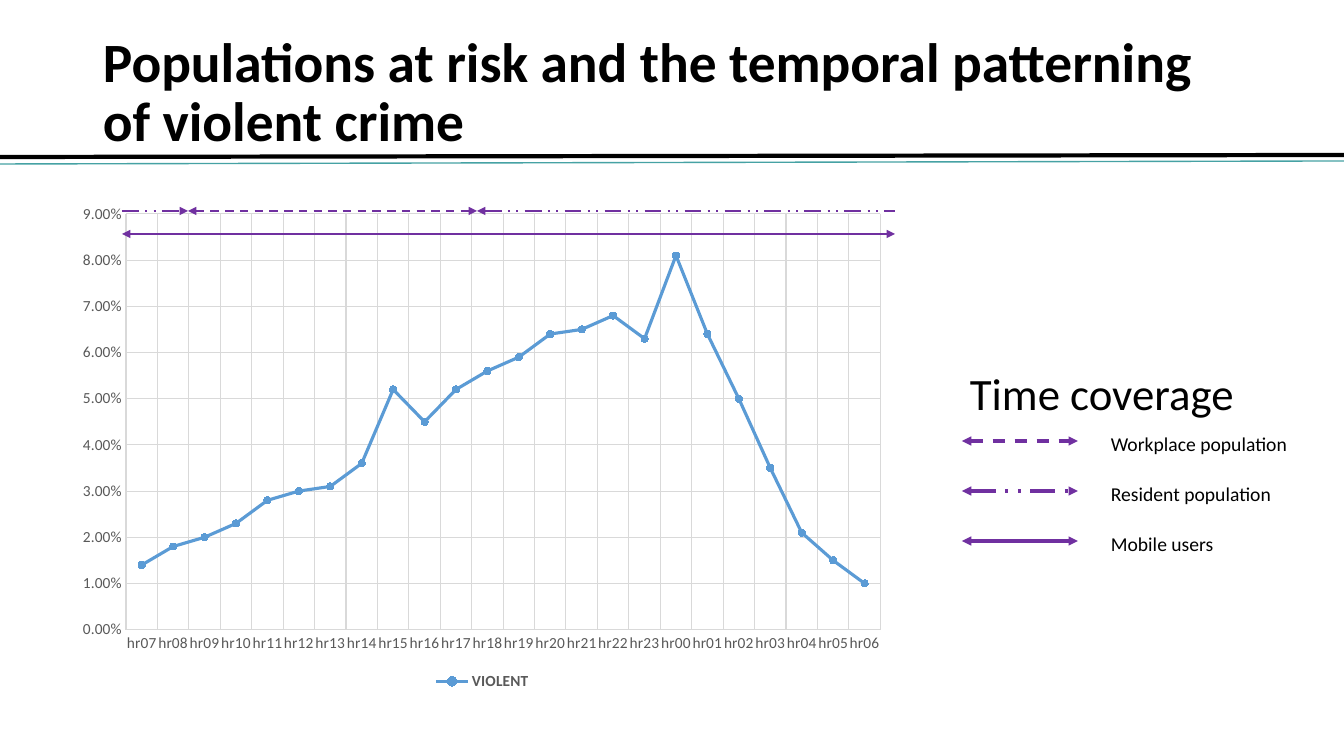
import dataclasses
import typing

import lxml.etree
import pptx
import pptx.chart.chart
import pptx.chart.data
import pptx.dml.color
import pptx.enum.chart
import pptx.enum.dml
import pptx.enum.shapes
import pptx.enum.text
import pptx.oxml
import pptx.oxml.ns
import pptx.shapes.shapetree
import pptx.util

EMU_PER_PX = 12192000 / 1344
FONT = "Calibri"
COLORS = {
    "black": "000000",
    "teal": "46A2A4",
    "purple": "7030A0",
    "blue": "5B9BD5",
    "gray": "595959",
    "grid": "D9D9D9",
}
DASH = pptx.enum.dml.MSO_LINE.DASH
DASH_DOT_DOT = pptx.enum.dml.MSO_LINE.DASH_DOT_DOT
SOLID = pptx.enum.dml.MSO_LINE.SOLID
VIOLENT_SHARES = (
    0.014, 0.018, 0.02, 0.023, 0.028, 0.03, 0.031, 0.036,
    0.052, 0.045, 0.052, 0.056, 0.059, 0.064, 0.065, 0.068,
    0.063, 0.081, 0.064, 0.05, 0.035, 0.021, 0.015, 0.01,
)
PLOT_FRACTIONS = {"x": 0.07, "y": 0.04, "w": 0.91, "h": 0.83}


@dataclasses.dataclass(frozen=True)
class Line:
    start: tuple[int, int]
    end: tuple[int, int]
    color: str
    width: float
    dash: pptx.enum.dml.MSO_LINE = SOLID
    head: bool = False
    tail: bool = False


@dataclasses.dataclass(frozen=True)
class Label:
    text: str
    left: int
    top: int
    width: int
    height: int
    size: float


@dataclasses.dataclass(frozen=True)
class KeyEntry:
    text: str
    dash: pptx.enum.dml.MSO_LINE
    height: int


RULES = (
    Line((0, 157), (1344, 155), "black", 3),
    Line((0, 164), (1344, 161), "teal", 1),
)
COVERAGE = (
    Line((188, 211), (477, 211), "purple", 1.5, DASH, True, True),
    Line((477, 211), (895, 211), "purple", 1.5, DASH_DOT_DOT, head=True),
    Line((122, 211), (188, 211), "purple", 1.5, DASH_DOT_DOT, tail=True),
    Line((122, 234), (895, 234), "purple", 1.5, SOLID, True, True),
)
KEY = (
    KeyEntry("Workplace population", DASH, 57),
    KeyEntry("Resident population", DASH_DOT_DOT, 57),
    KeyEntry("Mobile users", SOLID, 34),
)
KEY_PITCH = 50
TITLE = Label(
    "Populations at risk and the temporal patterning of violent crime",
    93, 40, 1159, 108, 39.6,
)
KEY_HEADING = Label("Time coverage", 960, 361, 323, 119, 32)


def px(value: int) -> pptx.util.Emu:
    return pptx.util.Emu(round(value * EMU_PER_PX))


def rgb(name: str) -> pptx.dml.color.RGBColor:
    return pptx.dml.color.RGBColor.from_string(COLORS[name])


def draw_line(shapes: typing.Any, line: Line) -> None:
    connector = shapes.add_connector(
        pptx.enum.shapes.MSO_CONNECTOR.STRAIGHT,
        *map(px, line.start + line.end),
    )
    connector.line.color.rgb = rgb(line.color)
    connector.line.width = pptx.util.Pt(line.width)
    connector.line.dash_style = line.dash
    outline = connector.line._get_or_add_ln()
    for tag, shown in (("a:headEnd", line.head), ("a:tailEnd", line.tail)):
        if shown:
            arrow = lxml.etree.SubElement(outline, pptx.oxml.ns.qn(tag))
            arrow.set("type", "triangle")
    properties = connector._element.spPr
    lxml.etree.SubElement(properties, pptx.oxml.ns.qn("a:effectLst"))


def draw_label(shapes: typing.Any, label: Label, title: bool = False) -> None:
    box = shapes.add_textbox(
        px(label.left), px(label.top), px(label.width), px(label.height)
    )
    frame = box.text_frame
    frame.word_wrap = True
    paragraph = frame.paragraphs[0]
    if title:
        frame.vertical_anchor = pptx.enum.text.MSO_ANCHOR.MIDDLE
        paragraph.line_spacing = 0.9
    else:
        frame.auto_size = pptx.enum.text.MSO_AUTO_SIZE.SHAPE_TO_FIT_TEXT
    run = paragraph.add_run()
    run.text = label.text
    style_font(run.font, label.size, "black", title)


def style_font(font: typing.Any, size: float, color: str, bold: bool = False) -> None:
    font.name = FONT
    font.size = pptx.util.Pt(size)
    font.bold = bold
    font.color.rgb = rgb(color)


def style_axis(axis: typing.Any) -> None:
    axis.major_tick_mark = pptx.enum.chart.XL_TICK_MARK.NONE
    axis.minor_tick_mark = pptx.enum.chart.XL_TICK_MARK.NONE
    axis.has_major_gridlines = True
    gridline = axis.major_gridlines.format.line
    gridline.color.rgb = rgb("grid")
    gridline.width = pptx.util.Pt(0.75)
    style_font(axis.tick_labels.font, 11, "gray")


def place_plot(chart: pptx.chart.chart.Chart) -> None:
    plot_area = chart._chartSpace.chart.plotArea
    for old_layout in plot_area.findall(pptx.oxml.ns.qn("c:layout")):
        plot_area.remove(old_layout)
    settings = {"layoutTarget": "inner", "xMode": "edge", "yMode": "edge"}
    settings.update({key: str(value) for key, value in PLOT_FRACTIONS.items()})
    layout = pptx.oxml.parse_xml(
        f"<c:layout {pptx.oxml.ns.nsdecls('c')}><c:manualLayout/></c:layout>"
    )
    for tag, value in settings.items():
        setting = lxml.etree.SubElement(layout[0], pptx.oxml.ns.qn(f"c:{tag}"))
        setting.set("val", value)
    plot_area.insert(0, layout)


def draw_chart(shapes: pptx.shapes.shapetree.SlideShapes) -> None:
    chart_data = pptx.chart.data.CategoryChartData(number_format="0.00%")
    chart_data.categories = [f"hr{(7 + step) % 24:02d}" for step in range(24)]
    chart_data.add_series("VIOLENT", VIOLENT_SHARES)
    chart = shapes.add_chart(
        pptx.enum.chart.XL_CHART_TYPE.LINE_MARKERS,
        px(68), px(194), px(829), px(501), chart_data,
    ).chart
    style_font(chart.font, 11, "black")
    chart.has_title = False
    chart.has_legend = True
    chart.legend.position = pptx.enum.chart.XL_LEGEND_POSITION.BOTTOM
    chart.legend.include_in_layout = False
    style_font(chart.legend.font, 11, "gray", True)
    style_axis(chart.category_axis)
    style_axis(chart.value_axis)
    chart.category_axis.format.line.color.rgb = rgb("grid")
    chart.category_axis.format.line.width = pptx.util.Pt(0.75)
    chart.value_axis.format.line.fill.background()
    chart.value_axis.minimum_scale = 0
    chart.value_axis.maximum_scale = 0.09
    chart.value_axis.major_unit = 0.01
    chart.value_axis.tick_labels.number_format = "0.00%"
    chart.value_axis.tick_labels.number_format_is_linked = False
    chart.plots[0].vary_by_categories = False
    series = chart.plots[0].series[0]
    series.smooth = False
    series.format.line.color.rgb = rgb("blue")
    series.format.line.width = pptx.util.Pt(2.25)
    series.marker.style = pptx.enum.chart.XL_MARKER_STYLE.CIRCLE
    series.marker.size = 5
    series.marker.format.fill.solid()
    series.marker.format.fill.fore_color.rgb = rgb("blue")
    series.marker.format.line.color.rgb = rgb("blue")
    place_plot(chart)


def main() -> None:
    presentation = pptx.Presentation()
    presentation.slide_width = px(1344)
    presentation.slide_height = px(756)
    slide = presentation.slides.add_slide(presentation.slide_layouts[6])
    for rule in RULES:
        draw_line(slide.shapes, rule)
    draw_chart(slide.shapes)
    coverage = slide.shapes.add_group_shape()
    for span in COVERAGE:
        draw_line(coverage.shapes, span)
    key = slide.shapes.add_group_shape()
    for row, entry in enumerate(KEY):
        y = 441 + row * KEY_PITCH
        draw_line(key.shapes, Line((962, y), (1078, y), "purple", 2.25, entry.dash, True, True))
        draw_label(key.shapes, Label(entry.text, 1101, y - 14, 214, entry.height, 14))
    draw_label(key.shapes, KEY_HEADING)
    draw_label(slide.shapes, TITLE, title=True)
    presentation.save("out.pptx")


if __name__ == "__main__":
    main()
